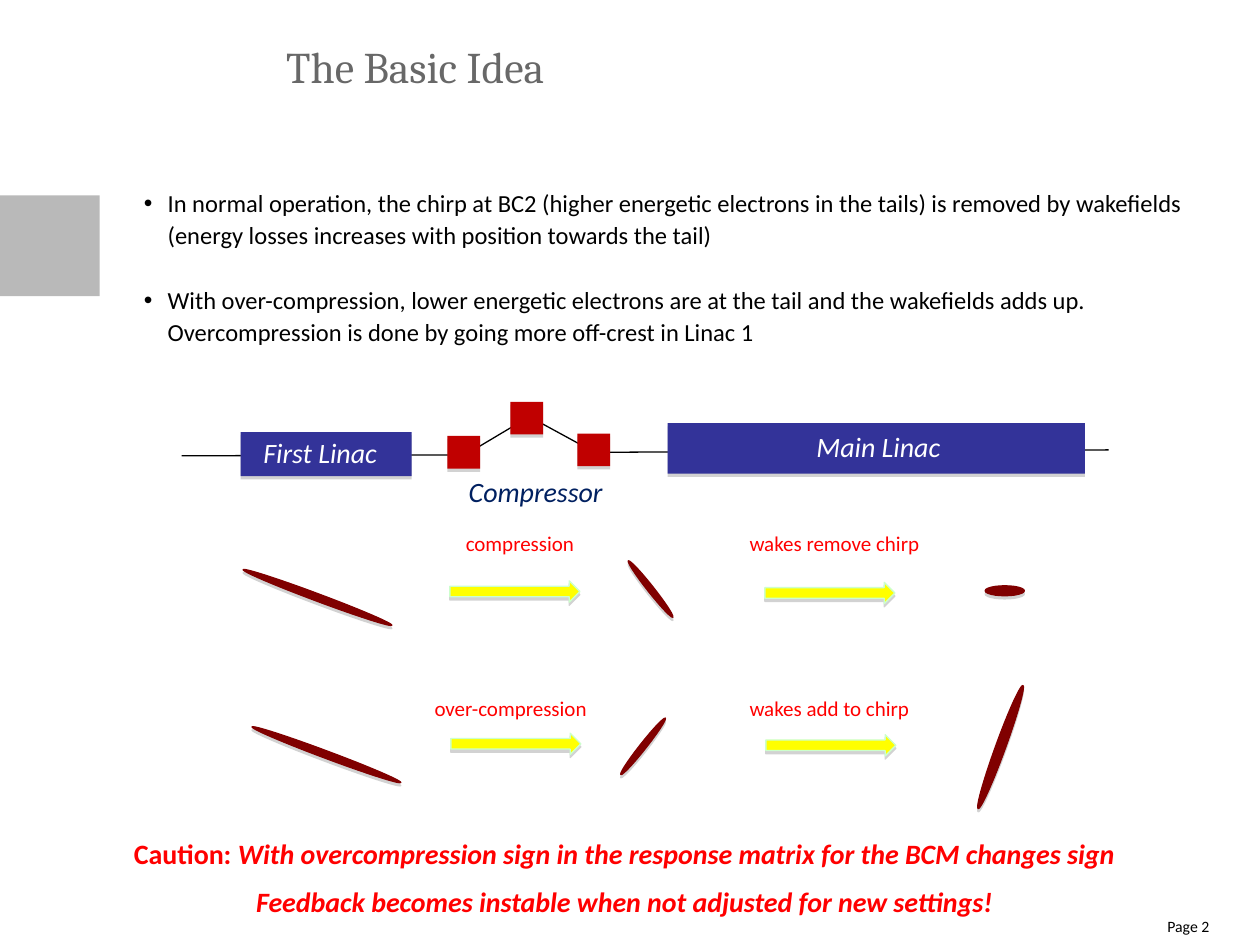
from lxml import etree
from pptx import Presentation
from pptx.dml.color import RGBColor
from pptx.enum import shapes, text
from pptx.oxml import ns
from pptx.util import Cm, Pt

BLACK = RGBColor(0x00, 0x00, 0x00)
WHITE = RGBColor(0xFF, 0xFF, 0xFF)
GREY = RGBColor(0xB9, 0xB9, 0xB9)
TITLE_GREY = RGBColor(0x68, 0x68, 0x68)
LINAC_BLUE = RGBColor(0x33, 0x33, 0x99)
NAVY = RGBColor(0x00, 0x20, 0x60)
MAGNET_RED = RGBColor(0xC0, 0x00, 0x00)
BUNCH_RED = RGBColor(0x80, 0x00, 0x00)
RED = RGBColor(0xFF, 0x00, 0x00)
YELLOW = RGBColor(0xFF, 0xFF, 0x00)
PALE_GREEN = RGBColor(0xCC, 0xFF, 0xCC)
SHAPE = shapes.MSO_SHAPE


def style(run, size, color, font="Calibri", bold=False, italic=False):
    run.font.name = font
    run.font.size = Pt(size)
    run.font.color.rgb = color
    run.font.bold = bold
    run.font.italic = italic


def clear_margins(frame):
    frame.margin_left = frame.margin_right = 0
    frame.margin_top = frame.margin_bottom = 0


def add_shadow(part):
    effects = part._element.spPr.find(ns.qn("a:effectLst"))
    shadow = etree.SubElement(effects, ns.qn("a:outerShdw"), blurRad="0",
                              dist=str(Pt(1.8)), dir="5400000", rotWithShape="0")
    tint = etree.SubElement(shadow, ns.qn("a:srgbClr"), val="808080")
    etree.SubElement(tint, ns.qn("a:alpha"), val="35000")


def add_part(slide, kind, left, top, width, height, fill, line=None, angle=0, shadow=True):
    part = slide.shapes.add_shape(kind, Cm(left), Cm(top), Cm(width), Cm(height))
    part.fill.solid()
    part.fill.fore_color.rgb = fill
    if line is None:
        part.line.fill.background()
    else:
        part.line.color.rgb = line
        part.line.width = Pt(0.75)
    part.rotation = angle
    part.shadow.inherit = False
    if shadow:
        add_shadow(part)
    return part


def add_label(slide, wording, left, top, width, height, size, color, italic=False):
    label = slide.shapes.add_textbox(Cm(left), Cm(top), Cm(width), Cm(height))
    frame = label.text_frame
    frame.word_wrap = False
    frame.auto_size = text.MSO_AUTO_SIZE.SHAPE_TO_FIT_TEXT
    frame.text = wording
    style(frame.paragraphs[0].runs[0], size, color, italic=italic)


def place_title(slide, left, top, width, height):
    title = slide.shapes.title
    title.left, title.top, title.width, title.height = Cm(left), Cm(top), Cm(width), Cm(height)
    frame = title.text_frame
    clear_margins(frame)
    frame.vertical_anchor = text.MSO_ANCHOR.TOP
    frame.text = "The Basic Idea"
    frame.paragraphs[0].alignment = text.PP_ALIGN.LEFT
    style(frame.paragraphs[0].runs[0], 25, TITLE_GREY, "Cambria")


def place_explanation(slide, left, top, width, height):
    explanation = slide.shapes.add_textbox(Cm(left), Cm(top), Cm(width), Cm(height))
    frame = explanation.text_frame
    clear_margins(frame)
    frame.word_wrap = True
    frame.text = (
        "In normal operation, the chirp at BC2 (higher energetic electrons in the tails) is removed "
        "by wakefields (energy losses increases with position towards the tail)\n"
        "With over-compression, lower energetic electrons are at the tail and the wakefields adds up. "
        "Overcompression is done by going more off-crest in Linac 1")
    for index, point in enumerate(frame.paragraphs):
        properties = point._p.get_or_add_pPr()
        properties.set("marL", str(Cm(0.48)))
        properties.set("indent", str(-Cm(0.48)))
        etree.SubElement(properties, ns.qn("a:buFont"), typeface="Arial")
        etree.SubElement(properties, ns.qn("a:buChar"), char="•")
        point.line_spacing = 1.1
        point.space_before = Pt(18.5 * index)
        style(point.runs[0], 14, BLACK)


def place_beamline(slide, left, top):
    track = [(0, 1.09), (5.72, 1.07), (7.01, 0.3), (8.33, 1.02), (18.69, 0.97)]
    start, *rest = [(Cm(left + x), Cm(top + y)) for x, y in track]
    builder = slide.shapes.build_freeform(*start)
    builder.add_line_segments(rest, close=False)
    beam = builder.convert_to_shape()
    beam.fill.background()
    beam.line.color.rgb = BLACK
    beam.line.width = Pt(0.75)
    beam.shadow.inherit = False

    for x, y, width, height in [(1.19, 0.61, 3.45, 0.89), (9.8, 0.43, 8.41, 1.02)]:
        add_part(slide, SHAPE.RECTANGLE, left + x, top + y, width, height, LINAC_BLUE)
    for x, y in [(5.36, 0.69), (7.98, 0.64), (6.63, 0)]:
        add_part(slide, SHAPE.RECTANGLE, left + x, top + y, 0.66, 0.66, MAGNET_RED)
    for wording, x, y, width, color in [("First Linac", 1.4, 0.56, 2.82, WHITE),
                                        ("Compressor", 5.54, 1.35, 3.25, NAVY),
                                        ("Main Linac", 12.55, 0.43, 3.05, WHITE)]:
        add_label(slide, wording, left + x, top + y, width, 0.94, 16, color, italic=True)


def place_bunch_row(slide, left, top, bunches, arrows, labels):
    for x, y, width, height, angle in bunches:
        add_part(slide, SHAPE.OVAL, left + x, top + y, width, height,
                 BUNCH_RED, BUNCH_RED, angle)
    for x, y in arrows:
        add_part(slide, SHAPE.RIGHT_ARROW, left + x, top + y, 2.62, 0.43, YELLOW, PALE_GREEN)
    for wording, x, y, width in labels:
        add_label(slide, wording, left + x, top + y, width, 0.76, 12, RED)


def place_caution(slide, left, top, width, height):
    caution = slide.shapes.add_textbox(Cm(left), Cm(top), Cm(width), Cm(height))
    frame = caution.text_frame
    frame.word_wrap = False
    frame.auto_size = text.MSO_AUTO_SIZE.SHAPE_TO_FIT_TEXT
    warning = frame.paragraphs[0]
    consequence = frame.add_paragraph()
    for line, wording, italic in [
            (warning, "Caution: ", False),
            (warning, "With overcompression sign in the response matrix for the BCM changes sign", True),
            (consequence, "Feedback becomes instable when not adjusted for new settings!", True)]:
        run = line.add_run()
        run.text = wording
        style(run, 16, RED, bold=True, italic=italic)
        line.alignment = text.PP_ALIGN.CENTER
    consequence.space_before = Pt(8)


def place_page_number(slide, left, top, width, height):
    page = slide.shapes.add_textbox(Cm(left), Cm(top), Cm(width), Cm(height))
    frame = page.text_frame
    clear_margins(frame)
    frame.word_wrap = True
    frame.text = "Page 2"
    frame.paragraphs[0].alignment = text.PP_ALIGN.RIGHT
    style(frame.paragraphs[0].runs[0], 9, BLACK)


def main():
    deck = Presentation()
    deck.slide_width, deck.slide_height = Cm(25.4), Cm(19.05)
    slide = deck.slides.add_slide(deck.slide_layouts[5])
    add_part(slide, SHAPE.RECTANGLE, 0, 3.94, 2.01, 2.03, GREY, shadow=False)
    place_title(slide, 5.77, 0.81, 18.64, 1.42)
    place_explanation(slide, 2.9, 3.73, 21.51, 13)
    place_beamline(slide, 3.66, 8.1)
    place_bunch_row(
        slide, 4.8, 10.57,
        bunches=[(0, 1.4, 3.2, 0.15, 20.5), (7.59, 1.24, 1.45, 0.13, 51.7),
                 (15.06, 1.24, 0.79, 0.2, 0)],
        arrows=[(4.27, 1.14), (10.62, 1.17)],
        labels=[("compression", 4.34, 0, 2.72), ("wakes remove chirp", 10.06, 0, 3.96)])
    place_bunch_row(
        slide, 4.8, 13.74,
        bunches=[(0.18, 1.4, 3.2, 0.15, 20.5), (7.44, 1.24, 1.45, 0.13, 308.3),
                 (14.05, 1.22, 2.64, 0.2, 290)],
        arrows=[(4.29, 1.04), (10.64, 1.07)],
        labels=[("over-compression", 3.71, 0.15, 3.61), ("wakes add to chirp", 10.06, 0.15, 3.76)])
    place_caution(slide, 2.31, 16.74, 20.57, 1.96)
    place_page_number(slide, 22.78, 18.49, 1.6, 0.56)
    deck.save("out.pptx")


if __name__ == "__main__":
    main()
